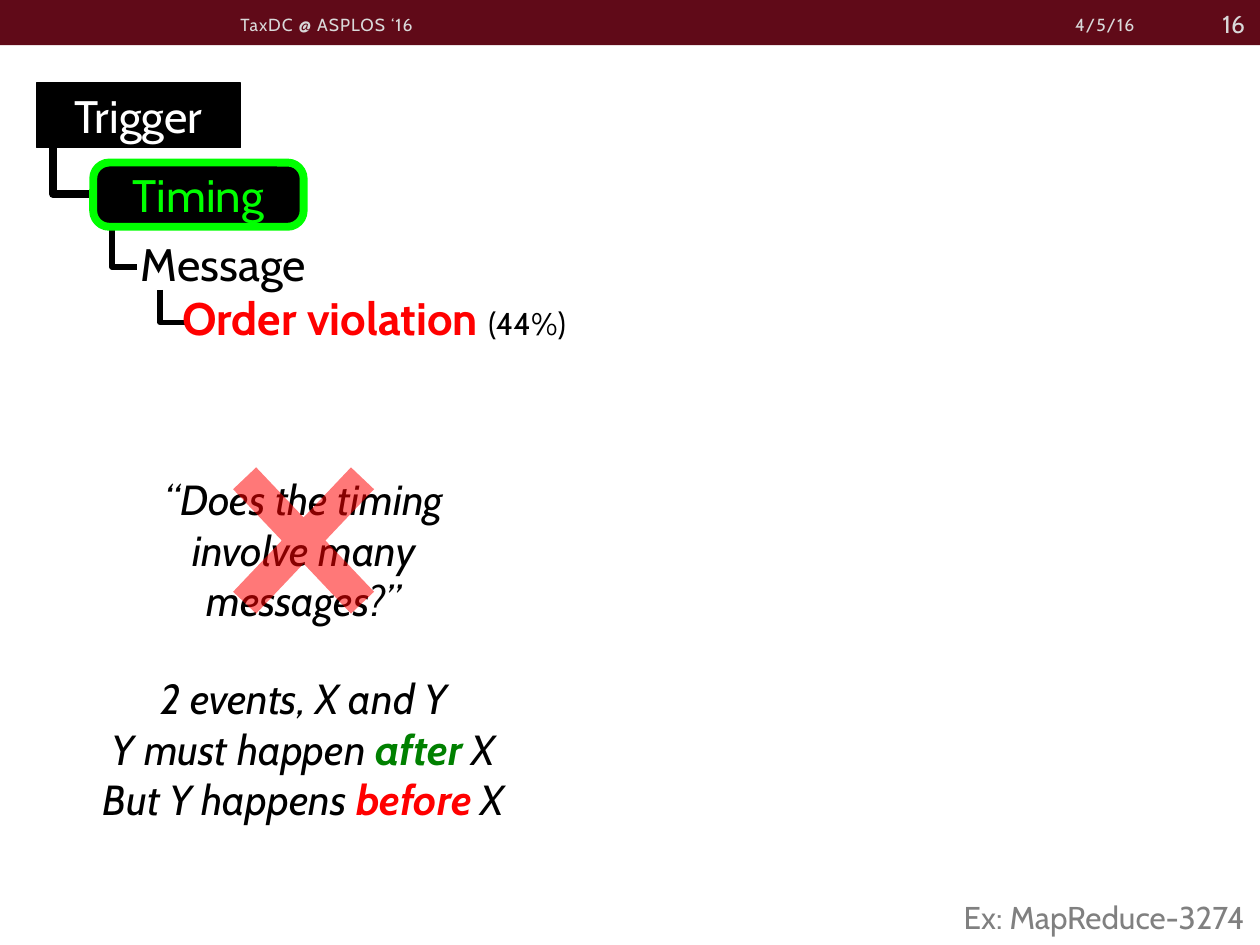
"""Build the slide on order violations, laid out on a grid of 100 columns by 75 rows."""
from typing import NamedTuple

import pptx
import pptx.dml.color
import pptx.enum.shapes
import pptx.enum.text
import pptx.oxml.ns
import pptx.oxml.xmlchemy
import pptx.util

COLUMNS, ROWS = 100, 75
WIDTH, HEIGHT = pptx.util.Inches(10), pptx.util.Inches(7.5)
COLORS = {
    "maroon": "600A18", "black": "000000", "white": "FFFFFF", "silver": "D9D9D9",
    "gray": "808080", "lime": "00FF00", "green": "008000", "red": "FF0000",
}
FONT = "Cabin"
ALIGN = pptx.enum.text.PP_ALIGN
ANCHOR = pptx.enum.text.MSO_ANCHOR
SHAPE = pptx.enum.shapes.MSO_SHAPE
QN = pptx.oxml.ns.qn


class Area(NamedTuple):
    column: float
    row: float
    columns: float
    rows: float

    def lengths(self):
        across, down = WIDTH / COLUMNS, HEIGHT / ROWS
        return (round(self.column * across), round(self.row * down),
                round(self.columns * across), round(self.rows * down))


class Run(NamedTuple):
    text: str
    color: str = "black"
    bold: bool = False
    size: float | None = None


class Label(NamedTuple):
    area: Area
    text: str
    align: ALIGN
    size: float
    spacing: int


class Node(NamedTuple):
    kind: SHAPE
    area: Area
    text: str
    color: str
    outline: str
    weight: float


class Branch(NamedTuple):
    area: Area
    weight: float


HEADER = [
    Label(Area(73.1, 0.5, 17.9, 2.9), "4/5/16", ALIGN.RIGHT, 10, 60),
    Label(Area(18.1, 0.5, 35.6, 2.9), "TaxDC @ ASPLOS ‘16", ALIGN.LEFT, 10, 60),
    Label(Area(91, -0.1, 8.8, 4), "16", ALIGN.RIGHT, 14, 0),
]
BRANCHES = [
    Branch(Area(8.9, 17.9, 2, 3.3), 3),
    Branch(Area(4.2, 11.7, 3.2, 3.7), 4.5),
    Branch(Area(12.7, 23, 2, 2.6), 3),
]
NODES = [
    Node(SHAPE.RECTANGLE, Area(2.9, 6.6, 16.2, 5.1), "Trigger", "white", "black", 0.75),
    Node(SHAPE.ROUNDED_RECTANGLE, Area(7.4, 12.9, 16.7, 5.1), "Timing", "lime", "lime", 4.5),
]
QUESTION = [[Run("“Does the timing")], [Run("involve many messages?”")]]
EVENTS = [
    [Run("2 events, X and Y")],
    [Run("Y must happen "), Run("after ", "green", True), Run("X")],
    [Run("But Y happens "), Run("before ", "red", True), Run("X")],
]
OUTLINE = [
    [Run("Message")],
    [Run("Order violation ", "red", True), Run("(44%)", size=18)],
]


def rgb(name: str) -> pptx.dml.color.RGBColor:
    return pptx.dml.color.RGBColor.from_string(COLORS[name])


def write(shape, paragraphs, *, size, align=ALIGN.LEFT, anchor=ANCHOR.TOP,
          italic=False, spacing=0, indents=()):
    """Fill a shape with paragraphs of runs in one format."""
    frame = shape.text_frame
    frame.word_wrap = True
    frame.vertical_anchor = anchor
    for index, runs in enumerate(paragraphs):
        paragraph = frame.paragraphs[0] if index == 0 else frame.add_paragraph()
        paragraph.alignment = align
        if index < len(indents):
            properties = paragraph._p.get_or_add_pPr()
            properties.set("marL", str(round(indents[index] * WIDTH / COLUMNS)))
            properties.set("indent", "0")
        for part in runs:
            run = paragraph.add_run()
            run.text = part.text
            run.font.name = FONT
            run.font.size = pptx.util.Pt(part.size or size)
            run.font.bold = part.bold
            run.font.italic = italic
            run.font.color.rgb = rgb(part.color)
            if spacing:
                run._r.get_or_add_rPr().set("spc", str(spacing))


def add_text(slide, area: Area, paragraphs, **text_format):
    write(slide.shapes.add_textbox(*area.lengths()), paragraphs, **text_format)


def add_shape(slide, kind: SHAPE, area: Area, *, fill=None, outline=None, weight=0.75):
    shape = slide.shapes.add_shape(kind, *area.lengths())
    shape.shadow.inherit = False
    if fill:
        shape.fill.solid()
        shape.fill.fore_color.rgb = rgb(fill)
    else:
        shape.fill.background()
    if outline:
        shape.line.color.rgb = rgb(outline)
        shape.line.width = pptx.util.Pt(weight)
    else:
        shape.line.fill.background()
    return shape


def add_branch(slide, branch: Branch):
    """Draw an elbow that goes down and then right across its area."""
    left, top, width, height = branch.area.lengths()
    connector = slide.shapes.add_connector(
        pptx.enum.shapes.MSO_CONNECTOR.ELBOW, 0, 0, height, width)
    connector.left = left + (width - height) // 2
    connector.top = top + (height - width) // 2
    connector.line.color.rgb = rgb("black")
    connector.line.width = pptx.util.Pt(branch.weight)
    properties = connector._element.spPr
    properties.find(QN("a:prstGeom")).set("prst", "bentConnector2")
    transform = properties.find(QN("a:xfrm"))
    transform.set("rot", "16200000")
    transform.set("flipH", "1")
    properties.append(pptx.oxml.xmlchemy.OxmlElement("a:effectLst"))


def add_cross(slide, area: Area):
    cross = add_shape(slide, SHAPE.MATH_MULTIPLY, area, fill="red")
    cross.adjustments[0] = 0.14
    alpha = pptx.oxml.xmlchemy.OxmlElement("a:alpha")
    alpha.set("val", "53000")
    cross._element.spPr.find(QN("a:solidFill"))[0].append(alpha)


def main():
    presentation = pptx.Presentation()
    presentation.slide_width, presentation.slide_height = WIDTH, HEIGHT
    slide = presentation.slides.add_slide(presentation.slide_layouts[6])

    add_shape(slide, SHAPE.RECTANGLE, Area(0, 0, COLUMNS, 3.6), fill="maroon")
    add_text(slide, Area(7, 37.1, 34.2, 13.1), QUESTION,
             size=24, align=ALIGN.CENTER, italic=True)
    for label in HEADER:
        add_text(slide, label.area, [[Run(label.text, "silver")]], size=label.size,
                 align=label.align, anchor=ANCHOR.MIDDLE, spacing=label.spacing)
    for branch in BRANCHES:
        add_branch(slide, branch)
    for node in NODES:
        box = add_shape(slide, node.kind, node.area, fill="black",
                        outline=node.outline, weight=node.weight)
        if node.kind == SHAPE.ROUNDED_RECTANGLE:
            box.adjustments[0] = 0.25
        write(box, [[Run(node.text, node.color)]], size=26,
              align=ALIGN.CENTER, anchor=ANCHOR.MIDDLE)
    add_text(slide, Area(10.2, 18.2, 41.4, 9.8), OUTLINE, size=26, indents=(0, 3.3))
    example = add_shape(slide, SHAPE.ROUNDED_RECTANGLE, Area(0, 70.5, COLUMNS, 4.5))
    write(example, [[Run("Ex: MapReduce-3274", "gray")]], size=18,
          align=ALIGN.RIGHT, anchor=ANCHOR.MIDDLE)
    add_text(slide, Area(6.5, 52.9, 35.2, 13.1), EVENTS,
             size=24, align=ALIGN.CENTER, italic=True)
    add_cross(slide, Area(15.1, 33.4, 18, 19))
    presentation.save("out.pptx")


if __name__ == "__main__":
    main()
